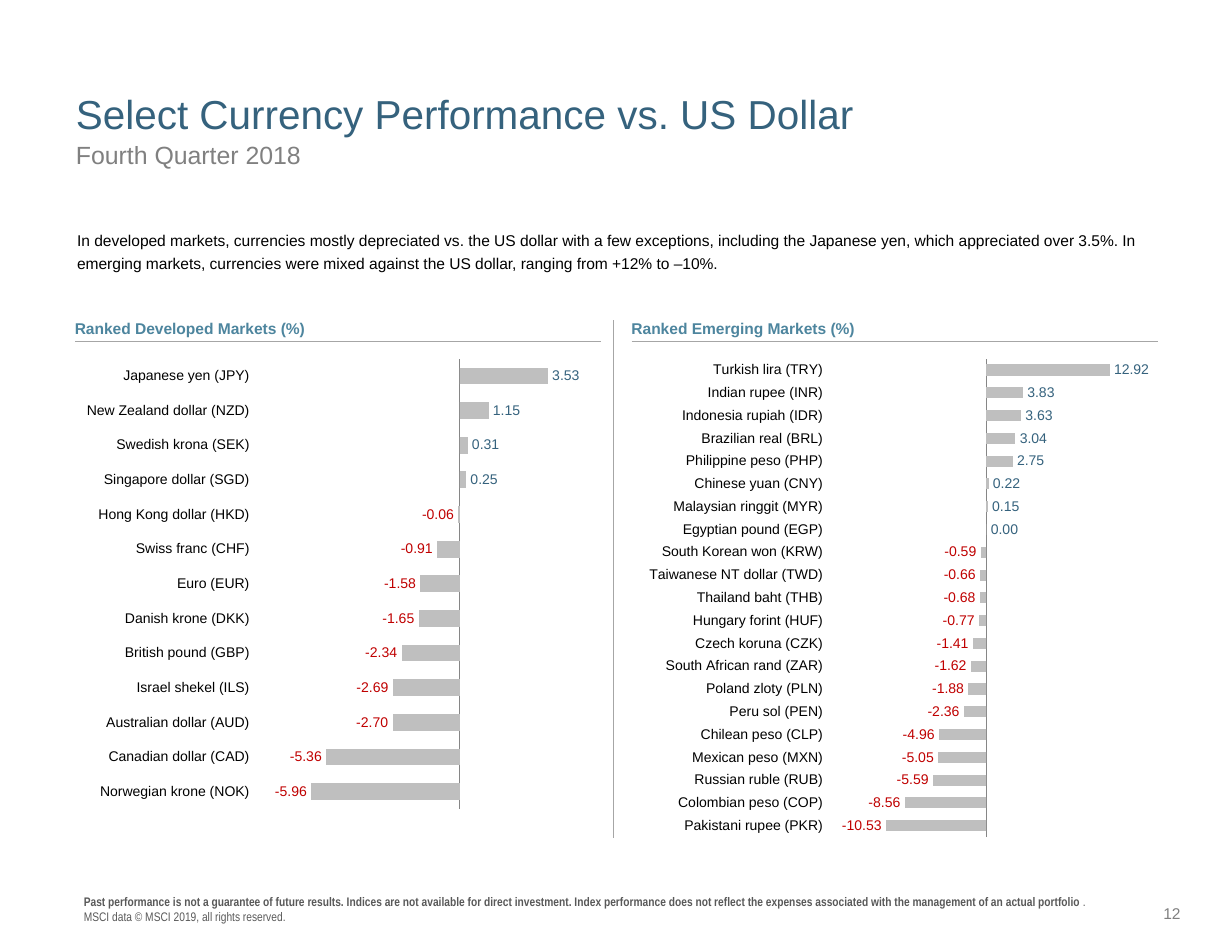
"""Build the currency performance slide with two ranked bar charts."""
from lxml import etree
from pptx import Presentation
from pptx import util as u
from pptx.chart.data import CategoryChartData
from pptx.dml.color import RGBColor
from pptx.enum import chart as ch
from pptx.enum import shapes, text
from pptx.oxml import parse_xml
from pptx.oxml.ns import nsdecls, qn

COLORS = {"navy": "35627D", "teal": "4D859E", "gray": "808080", "rule": "A6A6A6",
          "bar": "BFBFBF", "loss": "C00000", "black": "000000", "footer": "595959",
          "axis": "868686"}
HIDE_ZERO = "#,##0.00;\\-#,##0.00;"
SHOW_ZERO = "#,##0.00"

DEVELOPED = [
    ("Japanese yen (JPY)", 3.53), ("New Zealand dollar (NZD)", 1.15),
    ("Swedish krona (SEK)", 0.31), ("Singapore dollar (SGD)", 0.25),
    ("Hong Kong dollar (HKD)", -0.06), ("Swiss franc (CHF)", -0.91),
    ("Euro (EUR)", -1.58), ("Danish krone (DKK)", -1.65),
    ("British pound (GBP)", -2.34), ("Israel shekel (ILS)", -2.69),
    ("Australian dollar (AUD)", -2.70), ("Canadian dollar (CAD)", -5.36),
    ("Norwegian krone (NOK)", -5.96)]
EMERGING = [
    ("Turkish lira (TRY)", 12.92), ("Indian rupee (INR)", 3.83),
    ("Indonesia rupiah (IDR)", 3.63), ("Brazilian real (BRL)", 3.04),
    ("Philippine peso (PHP)", 2.75), ("Chinese yuan (CNY)", 0.22),
    ("Malaysian ringgit (MYR)", 0.15), ("Egyptian pound (EGP)", 0),
    ("South Korean won (KRW)", -0.59), ("Taiwanese NT dollar (TWD)", -0.66),
    ("Thailand baht (THB)", -0.68), ("Hungary forint (HUF)", -0.77),
    ("Czech koruna (CZK)", -1.41), ("South African rand (ZAR)", -1.62),
    ("Poland zloty (PLN)", -1.88), ("Peru sol (PEN)", -2.36),
    ("Chilean peso (CLP)", -4.96), ("Mexican peso (MXN)", -5.05),
    ("Russian ruble (RUB)", -5.59), ("Colombian peso (COP)", -8.56),
    ("Pakistani rupee (PKR)", -10.53)]


class SlideBuilder:
    def __init__(self, slide, font="Arial"):
        self.slide = slide
        self.font = font

    def style(self, font, size, color, bold=False, name=None):
        font.name = name or self.font
        font.size = u.Pt(size)
        font.bold = bold
        font.color.rgb = RGBColor.from_string(COLORS[color])

    def text(self, content, box, size, color, bold=False, insets=(0.1, 0.06),
             anchor=text.MSO_ANCHOR.TOP, align=text.PP_ALIGN.LEFT, parent=None):
        shape = (parent or self.slide).shapes.add_textbox(*map(u.Inches, box))
        frame = shape.text_frame
        frame.word_wrap = True
        frame.vertical_anchor = anchor
        frame.margin_left = frame.margin_right = u.Inches(insets[0])
        frame.margin_top = frame.margin_bottom = u.Inches(insets[1])
        paragraph = frame.paragraphs[0]
        paragraph.text = content
        paragraph.alignment = align
        self.style(paragraph.font, size, color, bold)
        return frame

    def footer(self, warning, source, box):
        frame = self.text("", box, 8, "footer", insets=(0.1, 0),
                          anchor=text.MSO_ANCHOR.BOTTOM)
        first, second = frame.paragraphs[0], frame.add_paragraph()
        bold_run = first.add_run()
        bold_run.text = warning
        bold_run.font.bold = True
        first.add_run().text = "."
        second.text = source
        for paragraph in (first, second):
            self.style(paragraph.font, 8, "footer", name="Arial Narrow")

    def line(self, start, end, parent=None):
        connector = (parent or self.slide).shapes.add_connector(
            shapes.MSO_CONNECTOR.STRAIGHT, *map(u.Inches, start + end))
        connector.line.color.rgb = RGBColor.from_string(COLORS["rule"])
        connector.line.width = u.Pt(0.5)
        etree.SubElement(connector._element.spPr, qn("a:effectLst"))

    def heading(self, content, left):
        group = self.slide.shapes.add_group_shape()
        frame = self.text(content, (left, 2.8, 4.66, 0.27), 10, "teal", True,
                          insets=(0.1, 0.05), parent=group)
        frame.auto_size = text.MSO_AUTO_SIZE.SHAPE_TO_FIT_TEXT
        self.line((left + 0.1, 3.05), (left + 4.8, 3.05), group)

    def bar_chart(self, rows, box, limits, plot):
        values = [value for _, value in rows]
        data = CategoryChartData(number_format=HIDE_ZERO)
        data.categories = [name for name, _ in rows]
        data.add_series("Series 1", [min(value, 0) for value in values])
        data.add_series("Series 2", [max(value, 0) for value in values])
        chart = self.slide.shapes.add_chart(
            ch.XL_CHART_TYPE.BAR_CLUSTERED, *map(u.Inches, box), data).chart
        chart.has_legend = chart.has_title = False
        self.style(chart.font, 9, "black")
        self.axes(chart, limits)
        self.plot_area(chart, plot)
        bars = chart.plots[0]
        bars.gap_width, bars.overlap = 106, 100
        bars.vary_by_categories = False
        for series, color in zip(bars.series, ("loss", "navy")):
            series.invert_if_negative = False
            series.format.fill.solid()
            series.format.fill.fore_color.rgb = RGBColor.from_string(COLORS["bar"])
            labels = series.data_labels
            labels.show_value = True
            labels.position = ch.XL_LABEL_POSITION.OUTSIDE_END
            labels.number_format = HIDE_ZERO
            labels.number_format_is_linked = False
            self.style(labels.font, 9, color)
        if 0 in values:
            self.zero_label(bars.series[1], values.index(0))

    def zero_label(self, series, index):
        label = series.points[index].data_label
        self.style(label.font, 9, "navy")
        label.position = ch.XL_LABEL_POSITION.OUTSIDE_END
        element = series.data_labels._element.find(qn("c:dLbl"))
        element.insert(1, parse_xml(
            f'<c:numFmt {nsdecls("c")} formatCode="{SHOW_ZERO}" sourceLinked="0"/>'))

    def axes(self, chart, limits):
        category, value = chart.category_axis, chart.value_axis
        category.reverse_order = True
        category.tick_label_position = ch.XL_TICK_LABEL_POSITION.LOW
        category.format.line.color.rgb = RGBColor.from_string(COLORS["axis"])
        category.format.line.width = u.Pt(0.75)
        self.style(category.tick_labels.font, 9, "black")
        value.minimum_scale, value.maximum_scale = limits
        value.tick_label_position = ch.XL_TICK_LABEL_POSITION.NONE
        value.format.line.fill.background()
        for axis in (category, value):
            axis.has_major_gridlines = False
            axis.major_tick_mark = axis.minor_tick_mark = ch.XL_TICK_MARK.NONE

    def plot_area(self, chart, plot):
        area = chart._chartSpace.chart.plotArea
        for old in area.findall(qn("c:layout")):
            area.remove(old)
        sizes = "".join(f'<c:{key} val="{size}"/>' for key, size in zip("xywh", plot))
        area.insert(0, parse_xml(
            f'<c:layout {nsdecls("c")}><c:manualLayout><c:layoutTarget val="inner"/>'
            f'<c:xMode val="edge"/><c:yMode val="edge"/>{sizes}'
            '</c:manualLayout></c:layout>'))


def main():
    presentation = Presentation()
    presentation.slide_width, presentation.slide_height = u.Inches(11), u.Inches(8.5)
    builder = SlideBuilder(presentation.slides.add_slide(presentation.slide_layouts[6]))

    builder.bar_chart(EMERGING, (5.66, 3.02, 4.65, 4.57), (-16, 16),
                      (0.384, 0.04, 0.586, 0.935))
    builder.bar_chart(DEVELOPED, (0.56, 3.02, 4.66, 4.57), (-8, 5),
                      (0.379, 0.04, 0.621, 0.88))
    builder.line((5.48, 2.86), (5.48, 7.48))
    builder.text("Select Currency Performance vs. US Dollar", (0.58, 0.74, 9.9, 0.57),
                 26, "navy")
    builder.footer(
        "Past performance is not a guarantee of future results. Indices are not available "
        "for direct investment. Index performance does not reflect the expenses associated "
        "with the management of an actual portfolio",
        "MSCI data © MSCI 2019, all rights reserved.", (0.65, 7.81, 9.33, 0.44))
    summary = builder.text(
        "In developed markets, currencies mostly depreciated vs. the US dollar with a few "
        "exceptions, including the Japanese yen, which appreciated over 3.5%. In emerging "
        "markets, currencies were mixed against the US dollar, ranging from +12% to –10%.",
        (0.59, 1.96, 9.74, 5.26), 10, "black")
    summary.paragraphs[0].line_spacing = u.Pt(15)
    builder.text("Fourth Quarter 2018", (0.58, 1.19, 9.65, 0.38), 16, "gray")
    builder.text("12", (10, 7.79, 0.54, 0.45), 10, "gray", insets=(0, 0),
                 anchor=text.MSO_ANCHOR.BOTTOM, align=text.PP_ALIGN.RIGHT)
    builder.heading("Ranked Developed Markets (%)", 0.57)
    builder.heading("Ranked Emerging Markets (%)", 5.54)
    presentation.save("out.pptx")


if __name__ == "__main__":
    main()
